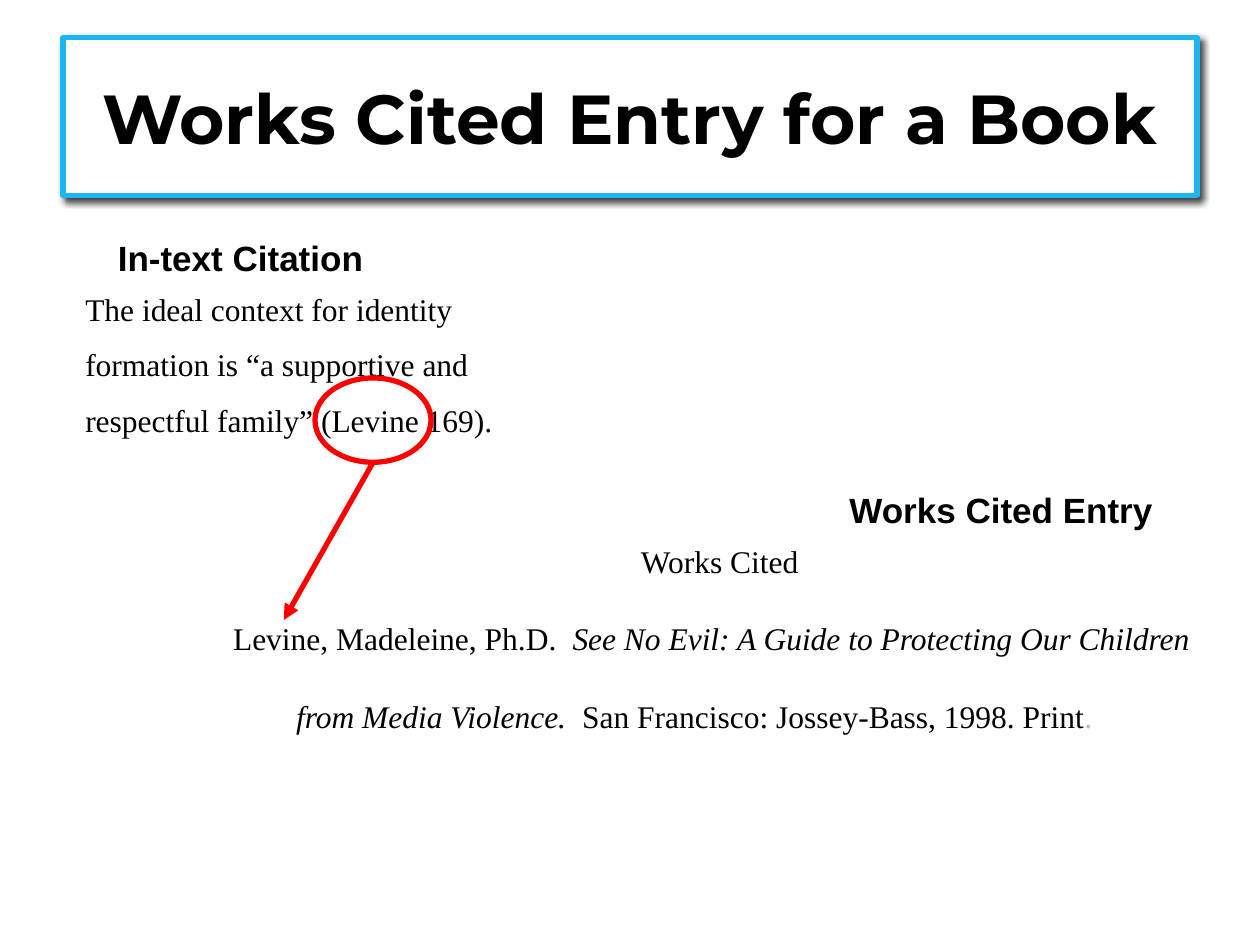
from lxml import etree
from pptx import Presentation
from pptx.dml.color import RGBColor
from pptx.enum.shapes import MSO_CONNECTOR as CONN, MSO_SHAPE as SHAPE
from pptx.enum.text import MSO_ANCHOR as ANCHOR, PP_ALIGN as ALIGN
from pptx.oxml import parse_xml
from pptx.oxml.ns import nsdecls, qn
from pptx.util import Cm, Pt

COLORS = {"white": "FFFFFF", "black": "000000", "blue": "1CB6F4",
          "red": "FF0000", "tan": "C4BD97"}


def rgb(name):
    return RGBColor.from_string(COLORS[name])


def add_run(p, text, font="Times New Roman", size=18, color="black",
            bold=False, italic=False):
    r = p.add_run()
    r.text = text
    r.font.name, r.font.size = font, Pt(size)
    r.font.bold, r.font.italic = bold, italic
    r.font.color.rgb = rgb(color)
    return r


class CitationSlide:
    line_width = Pt(3)

    def __init__(self, prs):
        self.s = prs.slides.add_slide(prs.slide_layouts[5])

    def outline(self, sp, color):
        sp.line.color.rgb = rgb(color)
        sp.line.width = self.line_width

    def panel(self, sp, line):
        sp.fill.solid()
        sp.fill.fore_color.rgb = rgb("white")
        self.outline(sp, line)
        sp.shadow.inherit = False

    def title(self, text, x, y, w, h):
        sp = self.s.shapes.title
        sp.left, sp.top, sp.width, sp.height = Cm(x), Cm(y), Cm(w), Cm(h)
        self.panel(sp, "blue")
        etree.SubElement(sp.line._get_or_add_ln(), qn("a:round"))
        # Soft shadow to the lower right
        sp._element.spPr.find(qn("a:effectLst")).append(parse_xml(
            f'<a:outerShdw {nsdecls("a")} blurRad="50800" dist="38100" '
            'dir="2940000" algn="tl" rotWithShape="0">'
            f'<a:srgbClr val="{COLORS["black"]}"><a:alpha val="72000"/>'
            '</a:srgbClr></a:outerShdw>'))
        tf = sp.text_frame
        tf.word_wrap, tf.vertical_anchor = True, ANCHOR.MIDDLE
        p = tf.paragraphs[0]
        p.alignment = ALIGN.CENTER
        r = add_run(p, text, font="Montserrat", size=39.6, bold=True)
        # Thin outline around the letters
        r.font._element.insert(0, parse_xml(
            f'<a:ln {nsdecls("a")} w="9525"><a:solidFill>'
            f'<a:srgbClr val="{COLORS["blue"]}"/></a:solidFill></a:ln>'))

    def heading(self, text, x, y, w, h=1.12):
        tf = self.s.shapes.add_textbox(Cm(x), Cm(y), Cm(w), Cm(h)).text_frame
        tf.word_wrap = True
        p = tf.paragraphs[0]
        p.alignment = ALIGN.CENTER
        add_run(p, text, font="Arial", size=20, bold=True)

    def passage(self, lines, x, y, w, h, gap):
        """Each line is a list of (text, format) runs."""
        sp = self.s.shapes.add_shape(SHAPE.RECTANGLE, Cm(x), Cm(y), Cm(w), Cm(h))
        self.panel(sp, "white")
        tf = sp.text_frame
        tf.word_wrap, tf.vertical_anchor = True, ANCHOR.TOP
        for i, runs in enumerate(lines):
            p = tf.add_paragraph() if i else tf.paragraphs[0]
            p.alignment = ALIGN.LEFT
            if i:
                p.space_before = Pt(gap)
            for text, style in runs:
                add_run(p, text, **style)
        return tf.paragraphs

    def callout(self, x, y, w, h, tip):
        """Ring around a word with an arrow from its foot to the tip."""
        group = self.s.shapes.add_group_shape().shapes
        ring = group.add_shape(SHAPE.OVAL, Cm(x), Cm(y), Cm(w), Cm(h))
        ring.fill.background()
        ring.shadow.inherit = False
        self.outline(ring, "red")
        arrow = group.add_connector(CONN.STRAIGHT, Cm(x + w / 2), Cm(y + h),
                                    Cm(tip[0]), Cm(tip[1]))
        self.outline(arrow, "red")
        etree.SubElement(arrow.line._get_or_add_ln(), qn("a:tailEnd"),
                         type="triangle")
        etree.SubElement(arrow._element.spPr, qn("a:effectLst"))


def main():
    prs = Presentation()
    prs.slide_width, prs.slide_height = Cm(25.4), Cm(19.05)
    slide = CitationSlide(prs)

    slide.title("Works Cited Entry for a Book", 1.27, 0.76, 22.86, 3.18)

    # Quotation with its in-text citation
    quote = ["The ideal context for identity",
             "formation is “a supportive and",
             "respectful family” (Levine 169)."]
    slide.passage([[(line, {})] for line in quote], 1.47, 5.72, 8.89, 3.3, gap=10)

    # Works cited list with a hanging second line
    italic = {"italic": True}
    entry = slide.passage([
        [("Works Cited", {})],
        [("Levine, Madeleine, Ph.D.  ", {}),
         ("See No Evil: A Guide to Protecting Our Children", italic)],
        [("from Media Violence.", italic),
         ("  San Francisco: Jossey-Bass, 1998. Print", {}),
         (".", {"color": "tan"})],
    ], 4.45, 10.8, 20.12, 4.06, gap=22.7)
    entry[0].alignment = ALIGN.CENTER
    entry[2]._p.get_or_add_pPr().set("marL", str(Cm(1.27)))

    # Link from the citation to the entry
    slide.callout(6.35, 7.62, 2.34, 1.7, tip=(5.72, 12.5))

    # Headings
    slide.heading("In-text Citation", 0.81, 4.65, 8.08)
    slide.heading("Works Cited Entry", 15.8, 9.73, 8.76)

    prs.save("out.pptx")


if __name__ == "__main__":
    main()
